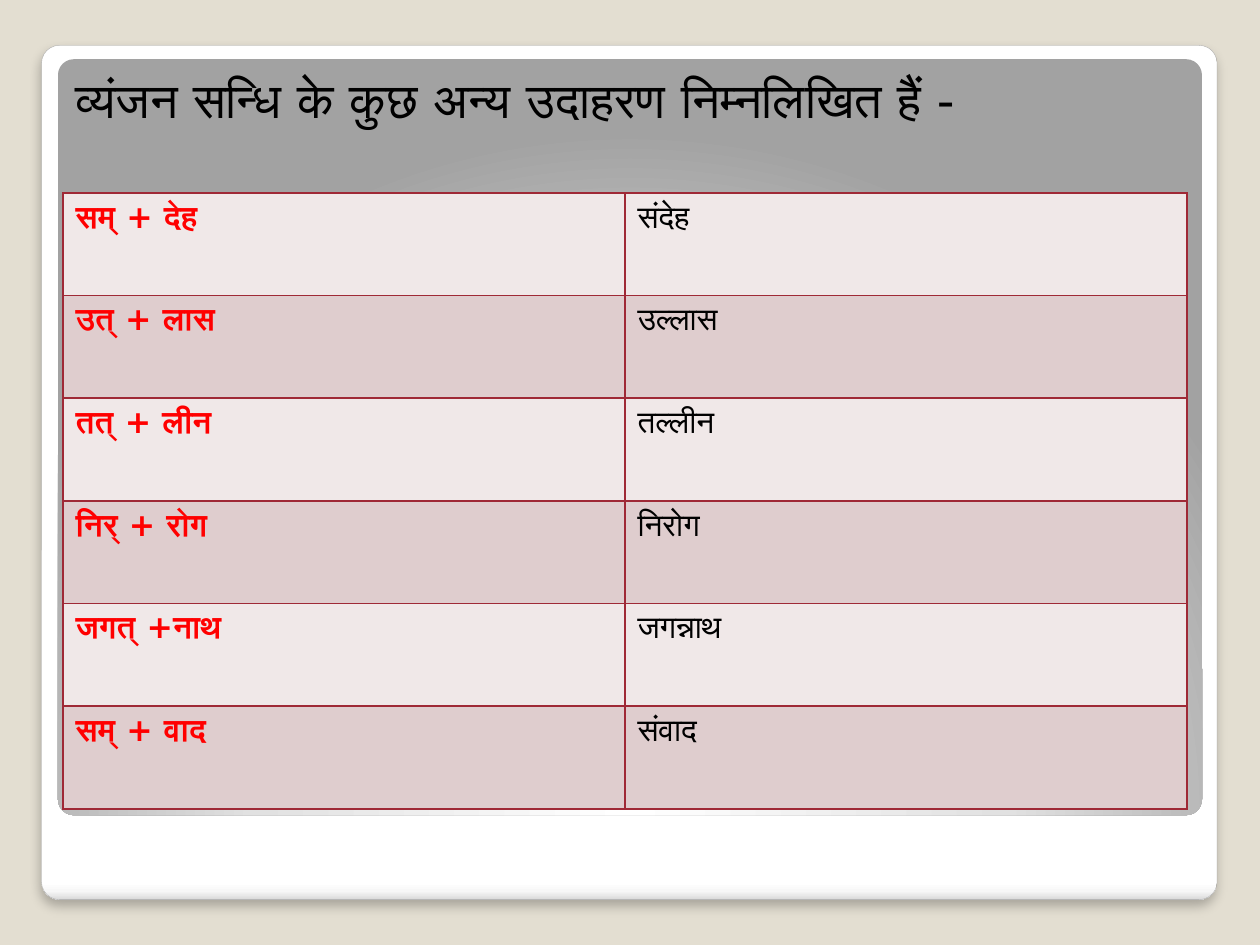
from pptx import Presentation
from pptx.dml.color import RGBColor
from pptx.enum.shapes import MSO_SHAPE
from pptx.enum.text import MSO_ANCHOR, MSO_AUTO_SIZE, PP_ALIGN
from pptx.oxml import parse_xml
from pptx.oxml.ns import nsdecls, qn
from pptx.util import Inches, Pt

TITLE = "व्यंजन सन्धि के कुछ अन्य उदाहरण निम्नलिखित हैं -"
EXAMPLES = [
    ("सम् + देह", "संदेह"),
    ("उत् + लास", "उल्लास"),
    ("तत् + लीन", "तल्लीन"),
    ("निर् + रोग", "निरोग"),
    ("जगत् +नाथ", "जगन्नाथ"),
    ("सम् + वाद", "संवाद"),
]
FONT = "DejaVu Sans"
COLORS = {
    "background": "E3DED1",
    "outline": "A4A4A4",
    "shadow": "000000",
    "text": "000000",
    "parts": "FF0000",
    "border": "9F2936",
    "light_row": "F0E8E8",
    "dark_row": "DFCDCE",
}
FRAME_STOPS = [(0, "FFFFFF"), (98, "FFFFFF"), (99, "F7F7F7"), (100, "DADADA")]
PANEL_STOPS = [(0, "FFFFFF"), (55, "E1E1E1"), (100, "A2A2A2")]
FRAME_SHADE = '<a:lin ang="5400000" scaled="0"/>'
PANEL_SHADE = (
    '<a:path path="circle">'
    '<a:fillToRect l="50000" t="175000" r="50000" b="-75000"/></a:path>'
)
LEFT, WIDTH = 0.5, 8.92
TABLE_TOP, TABLE_HEIGHT = 1.53, 4.89


def color(name):
    return RGBColor.from_string(COLORS[name])


def add_card(slide, box, stops, shade):
    card = slide.shapes.add_shape(MSO_SHAPE.ROUNDED_RECTANGLE, *map(Inches, box))
    card.adjustments[0] = 0.021
    card.shadow.inherit = False
    card.line.fill.background()
    card.fill.background()
    stop_xml = "".join(
        f'<a:gs pos="{position * 1000}"><a:srgbClr val="{value}"/></a:gs>'
        for position, value in stops
    )
    gradient = parse_xml(
        f'<a:gradFill {nsdecls("a")} rotWithShape="1">'
        f"<a:gsLst>{stop_xml}</a:gsLst>{shade}</a:gradFill>"
    )
    properties = card.element.spPr
    properties.replace(properties.find(qn("a:noFill")), gradient)
    return card


def add_shadow(shape):
    effects = shape.element.spPr.find(qn("a:effectLst"))
    effects.append(parse_xml(
        f'<a:outerShdw {nsdecls("a")} blurRad="{Pt(6)}" dist="{Pt(4)}" '
        f'dir="5400000" algn="tl" rotWithShape="0">'
        f'<a:srgbClr val="{COLORS["shadow"]}"><a:alpha val="25000"/></a:srgbClr>'
        f"</a:outerShdw>"
    ))


def write(text_frame, text, size, color_name, bold=False):
    paragraph = text_frame.paragraphs[0]
    paragraph.alignment = PP_ALIGN.LEFT
    run = paragraph.add_run()
    run.text = text
    run.font.size = Pt(size)
    run.font.bold = bold
    run.font.name = FONT
    run.font.color.rgb = color(color_name)
    run.font.language_id = None
    run.font._element.append(
        parse_xml(f'<a:cs {nsdecls("a")} typeface="{FONT}"/>')
    )


def add_borders(cell):
    properties = cell._tc.get_or_add_tcPr()
    for index, side in enumerate(("lnL", "lnR", "lnT", "lnB")):
        properties.insert(index, parse_xml(
            f'<a:{side} {nsdecls("a")} w="{Pt(1)}"><a:solidFill>'
            f'<a:srgbClr val="{COLORS["border"]}"/></a:solidFill></a:{side}>'
        ))


def add_examples(slide):
    table = slide.shapes.add_table(
        len(EXAMPLES), 2, Inches(LEFT), Inches(TABLE_TOP),
        Inches(WIDTH), Inches(TABLE_HEIGHT),
    ).table
    table.first_row = False
    table.horz_banding = False
    for row, example in enumerate(EXAMPLES):
        for column, text in enumerate(example):
            cell = table.cell(row, column)
            cell.fill.solid()
            cell.fill.fore_color.rgb = color("dark_row" if row % 2 else "light_row")
            add_borders(cell)
            is_parts = column == 0
            write(cell.text_frame, text, 18, "parts" if is_parts else "text", is_parts)


def place_title(slide):
    title = slide.shapes.title
    title.left, title.top = Inches(LEFT), Inches(0.5)
    title.width, title.height = Inches(WIDTH), Inches(0.57)
    frame = title.text_frame
    frame.word_wrap = True
    frame.auto_size = MSO_AUTO_SIZE.SHAPE_TO_FIT_TEXT
    frame.vertical_anchor = MSO_ANCHOR.TOP
    write(frame, TITLE, 28, "text")
    slide.shapes.element.append(title.element)


def main():
    presentation = Presentation()
    presentation.slide_width, presentation.slide_height = Inches(10), Inches(7.5)
    slide = presentation.slides.add_slide(presentation.slide_layouts[5])
    slide.background.fill.solid()
    slide.background.fill.fore_color.rgb = color("background")
    frame = add_card(slide, (0.33, 0.36, 9.33, 6.78), FRAME_STOPS, FRAME_SHADE)
    frame.line.color.rgb = color("outline")
    frame.line.width = Pt(0.16)
    add_shadow(frame)
    add_card(slide, (0.46, 0.47, 9.08, 6), PANEL_STOPS, PANEL_SHADE)
    add_examples(slide)
    place_title(slide)
    presentation.save("out.pptx")


if __name__ == "__main__":
    main()
